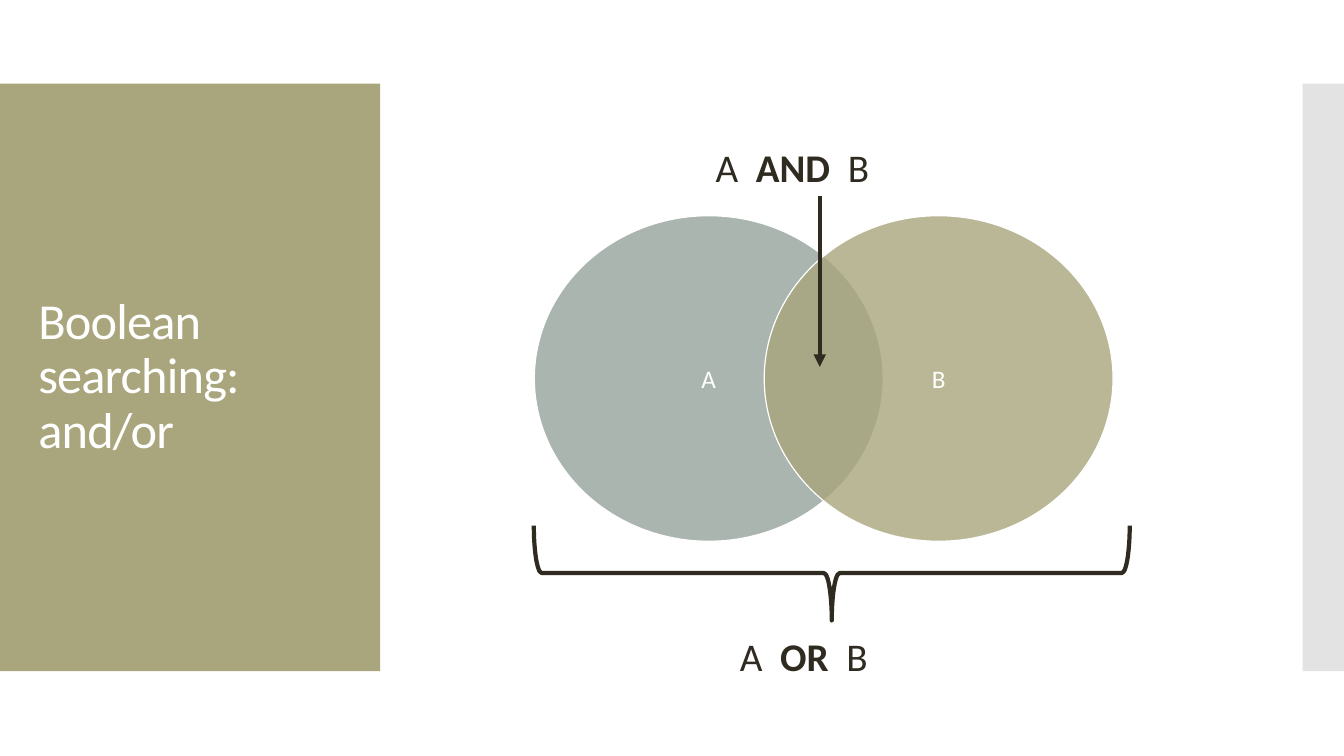
from lxml import etree
from pptx import Presentation
from pptx.dml.color import RGBColor
from pptx.enum.shapes import MSO_CONNECTOR, MSO_SHAPE
from pptx.enum.text import MSO_ANCHOR, PP_ALIGN
from pptx.oxml.ns import qn
from pptx.util import Inches, Pt

RECTANGLE = MSO_SHAPE.RECTANGLE
OVAL = MSO_SHAPE.OVAL
BRACE = MSO_SHAPE.LEFT_BRACE
STRAIGHT = MSO_CONNECTOR.STRAIGHT
MIDDLE, TOP = MSO_ANCHOR.MIDDLE, MSO_ANCHOR.TOP
LEFT, CENTER = PP_ALIGN.LEFT, PP_ALIGN.CENTER

WHITE, INK = "FFFFFF", "2F2B20"
OLIVE, SAGE, GREY = "A9A57C", "95A39D", "C8C8C8"


def paint(target, color):
    target.rgb = RGBColor.from_string(color)


def write(frame, *parts, size, color, font="Calibri", align=LEFT, anchor=TOP,
          line_spacing=None, tracking=0, bold=(), gap=0):
    frame.word_wrap = True
    frame.vertical_anchor = anchor
    paragraph = frame.paragraphs[0]
    paragraph.alignment = align
    paragraph.line_spacing = line_spacing
    for part in parts:
        run = paragraph.add_run()
        run.text = part
        run.font.name = font
        run.font.size = Pt(size)
        run.font.bold = part in bold
        paint(run.font.color, color)
        spacing = gap if part == " " else tracking
        if spacing:
            run.font._element.set("spc", str(round(spacing * 100)))


class VennSlide:
    def __init__(self, deck):
        self.slide = deck.slides.add_slide(deck.slide_layouts[5])
        self.shapes = self.slide.shapes
        self.stroke = Pt(3)
        self.label_size = 28
        self.word_gap = 6.3

    def shape(self, kind, left, top, width, height, fill=None, alpha=100,
              line=None, line_width=None):
        shape = self.shapes.add_shape(kind, Inches(left), Inches(top),
                                      Inches(width), Inches(height))
        shape.shadow.inherit = False
        if fill:
            shape.fill.solid()
            paint(shape.fill.fore_color, fill)
            if alpha < 100:
                tint = shape.element.spPr.find(".//" + qn("a:srgbClr"))
                etree.SubElement(tint, qn("a:alpha"), val=str(alpha * 1000))
        else:
            shape.fill.background()
        if line:
            paint(shape.line.color, line)
            shape.line.width = line_width
        else:
            shape.line.fill.background()
        return shape

    def title(self, text, left, top, width, height):
        title = self.shapes.title
        title.left, title.top = Inches(left), Inches(top)
        title.width, title.height = Inches(width), Inches(height)
        write(title.text_frame, text, size=36, color=WHITE, anchor=MIDDLE,
              line_spacing=0.9, tracking=-0.6)
        title.element.getparent().append(title.element)

    def circle(self, name, left, fill):
        circle = self.shape(OVAL, left, 2.14, 3.46, 3.23, fill, 80, WHITE, Pt(0.85))
        write(circle.text_frame, name, size=18, color=WHITE, align=CENTER, anchor=MIDDLE)

    def expression(self, operator, left, top, width):
        box = self.shapes.add_textbox(Inches(left), Inches(top), Inches(width), Inches(0.57))
        write(box.text_frame, "A", " ", operator, " ", "B", size=self.label_size,
              color=INK, bold=(operator,), gap=self.word_gap)

    def brace(self, left, top, width, height):
        brace = self.shape(BRACE, left, top, width, height, line=INK, line_width=self.stroke)
        brace.rotation = 270

    def arrow(self, x, top, bottom):
        arrow = self.shapes.add_connector(STRAIGHT, Inches(x), Inches(top),
                                          Inches(x), Inches(bottom))
        paint(arrow.line.color, INK)
        arrow.line.width = self.stroke
        etree.SubElement(arrow.line._get_or_add_ln(), qn("a:tailEnd"), type="triangle")
        etree.SubElement(arrow.element.spPr, qn("a:effectLst"))


def main():
    deck = Presentation()
    deck.slide_width, deck.slide_height = Inches(13.33), Inches(7.5)
    venn = VennSlide(deck)

    venn.shape(RECTANGLE, 0, 0.83, 3.77, 5.83, OLIVE)
    venn.shape(RECTANGLE, 12.92, 0.83, 0.41, 5.83, GREY, 50)
    venn.title("Boolean searching: and/or", 0.28, 1.23, 3.22, 5.03)

    for name, left, fill in (("A", 5.3, SAGE), ("B", 7.58, OLIVE)):
        venn.circle(name, left, fill)
    venn.expression("AND", 7, 1.37, 2.03)
    venn.brace(7.78, 2.73, 0.94, 5.91)
    venn.expression("OR", 7.24, 6.22, 1.71)
    venn.arrow(8.13, 1.94, 3.64)

    deck.save("out.pptx")


if __name__ == "__main__":
    main()
